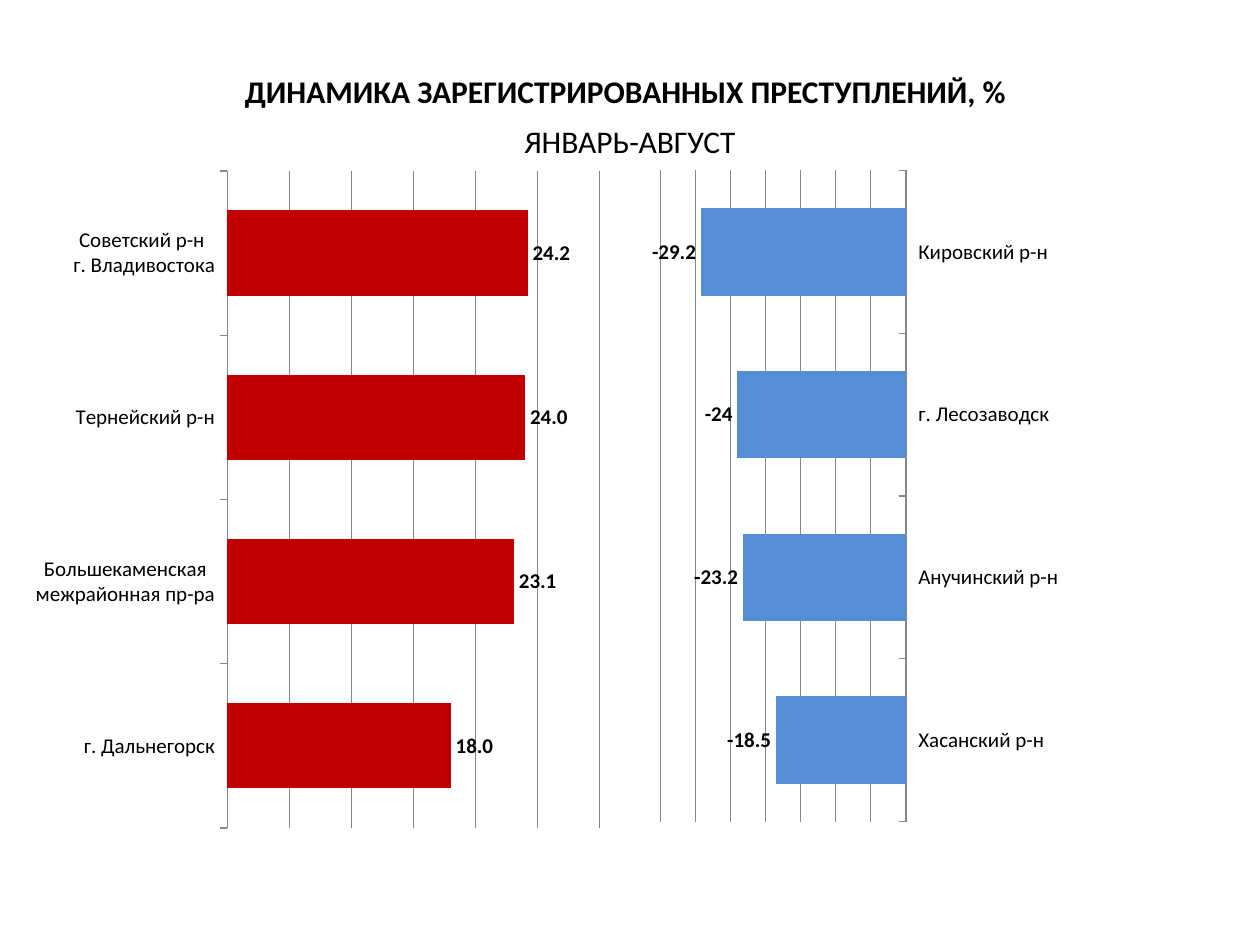
import pptx
import pptx.chart.data
import pptx.dml.color
import pptx.enum.chart
import pptx.enum.text
import pptx.oxml
import pptx.oxml.ns
import pptx.util

Inches, Pt = pptx.util.Inches, pptx.util.Pt
enum = pptx.enum.chart
NS = " ".join(pptx.oxml.ns.nsdecls(p) for p in ("c", "a"))
COLORS = {"text": "000000", "rise": "C00000", "fall": "558ED5", "grid": "868686"}


def color(name):
    return pptx.dml.color.RGBColor.from_string(COLORS[name])


def style(font, size, bold=False):
    font.name = "Calibri"
    font.size = Pt(size)
    font.bold = bold
    font.color.rgb = color("text")


def add_title(slide, box, text, bold=False):
    shape = slide.shapes.add_textbox(*map(Inches, box))
    frame = shape.text_frame
    frame.word_wrap = False
    frame.auto_size = pptx.enum.text.MSO_AUTO_SIZE.SHAPE_TO_FIT_TEXT
    para = frame.paragraphs[0]
    para.text = text
    para.alignment = pptx.enum.text.PP_ALIGN.CENTER
    style(para.font, 18, bold)


def set_plot(chart, plot):
    """Fix the inner plot area and clear the chart background."""
    parts = "".join(f'<c:{k} val="{v}"/>' for k, v in zip("xywh", plot))
    layout = pptx.oxml.parse_xml(
        f'<c:layout {NS}><c:manualLayout><c:layoutTarget val="inner"/>'
        f'<c:xMode val="edge"/><c:yMode val="edge"/>{parts}'
        "</c:manualLayout></c:layout>")
    layout.tag  # c:x, c:y, c:w, c:h are fractions of the chart
    area = chart.element.find(".//" + pptx.oxml.ns.qn("c:plotArea"))
    for old in area.findall(pptx.oxml.ns.qn("c:layout")):
        area.remove(old)
    area.insert(0, layout)
    clear = pptx.oxml.parse_xml(
        f"<c:spPr {NS}><a:noFill/><a:ln><a:noFill/></a:ln></c:spPr>")
    chart.element.find(pptx.oxml.ns.qn("c:chart")).addnext(clear)


def add_bars(slide, box, rows, fill, span, plot, gap, overlap, side, fmt):
    data = pptx.chart.data.CategoryChartData(number_format=fmt)
    data.categories = [name for name, _ in rows]
    data.add_series("Series 1", [value for _, value in rows])
    chart = slide.shapes.add_chart(
        enum.XL_CHART_TYPE.BAR_CLUSTERED, *map(Inches, box), data).chart
    chart.has_legend = chart.has_title = False
    style(chart.font, 18)
    set_plot(chart, plot)

    # Bars and their labels
    bars = chart.plots[0]
    bars.vary_by_categories = False
    bars.gap_width, bars.overlap = gap, overlap
    series = bars.series[0]
    series.invert_if_negative = False
    series.format.fill.solid()
    series.format.fill.fore_color.rgb = color(fill)
    labels = series.data_labels
    labels.show_value = True
    labels.position = enum.XL_LABEL_POSITION.OUTSIDE_END
    labels.number_format = fmt
    labels.number_format_is_linked = False
    style(labels.font, 12, True)

    # Axes and grid
    values, names = chart.value_axis, chart.category_axis
    values.minimum_scale, values.maximum_scale = span
    values.major_unit = 5
    values.has_major_gridlines = True
    values.visible = False
    names.tick_label_position = side
    names.major_tick_mark = enum.XL_TICK_MARK.OUTSIDE
    style(names.tick_labels.font, 12)
    for line in (values.major_gridlines.format.line, names.format.line):
        line.color.rgb = color("grid")
        line.width = Pt(0.75)


def main():
    deck = pptx.Presentation()
    deck.slide_width, deck.slide_height = Inches(10), Inches(7.5)
    slide = deck.slides.add_slide(deck.slide_layouts[6])

    # Heading
    add_title(slide, (1.81, 0.52, 6.31, 0.4),
              "ДИНАМИКА ЗАРЕГИСТРИРОВАННЫХ ПРЕСТУПЛЕНИЙ, %", True)

    # Districts with a fall
    falls = [("Хасанский р-н", -18.5), ("Анучинский р-н", -23.2),
             ("г. Лесозаводск", -24), ("Кировский р-н", -29.2)]
    add_bars(slide, (4.84, 1.19, 5, 5.44), falls, "fall", (-35, 0),
             (0.08, 0.03, 0.39, 0.95), 86, 0,
             enum.XL_TICK_LABEL_POSITION.HIGH, "General")

    add_title(slide, (4.05, 0.92, 1.9, 0.4), "ЯНВАРЬ-АВГУСТ")

    # Districts with a rise
    rises = [("г. Дальнегорск", 18), ("Большекаменская межрайонная пр-ра", 23.1),
             ("Тернейский р-н", 24), ("Советский р-н \nг. Владивостока", 24.2)]
    add_bars(slide, (0, 1.19, 5.47, 5.55), rises, "rise", (0, 30),
             (0.33, 0.03, 0.54, 0.94), 93, -49,
             enum.XL_TICK_LABEL_POSITION.NEXT_TO_AXIS, "0.0")

    deck.save("out.pptx")


if __name__ == "__main__":
    main()
